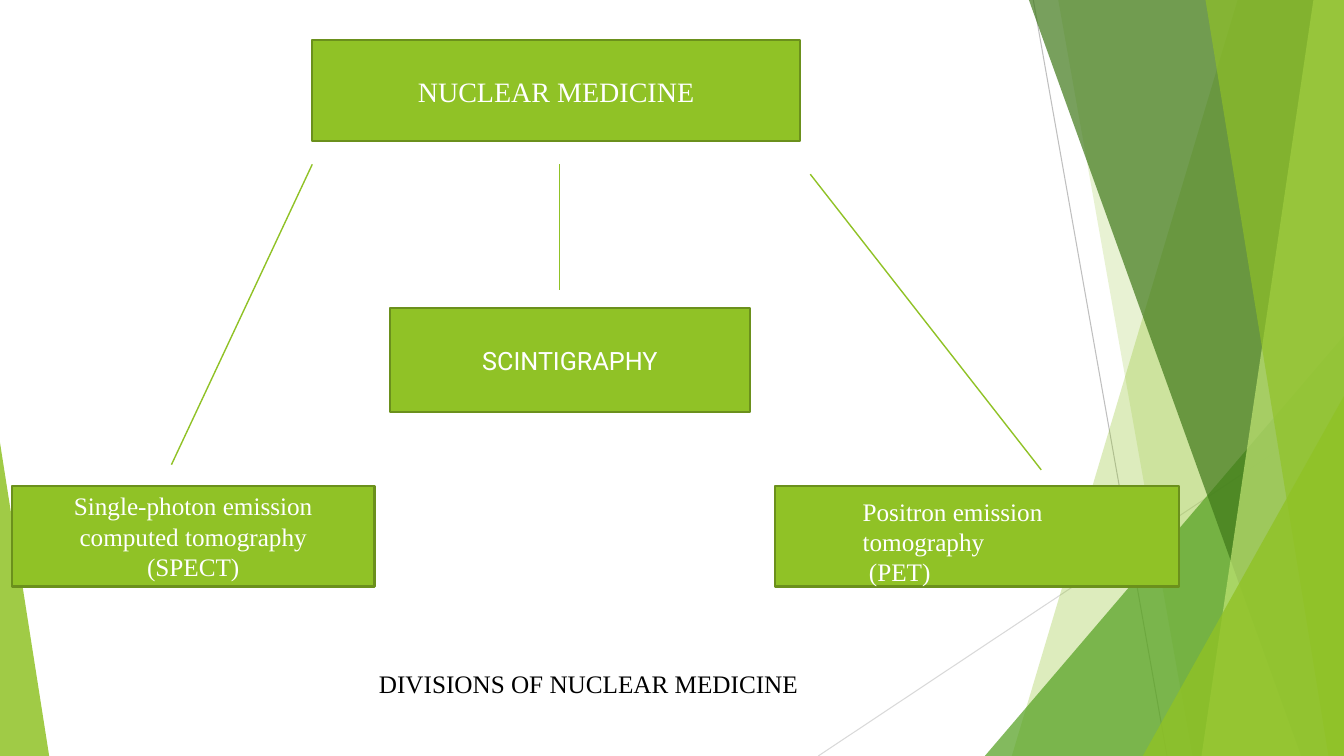
"""Build a slide charting the divisions of nuclear medicine."""
from lxml import etree
from pptx import Presentation
from pptx import util as u
from pptx.dml.color import RGBColor
from pptx.enum import shapes, text
from pptx.oxml.ns import qn

GREEN, EDGE, WHITE, BLACK = "90C226", "6B901C", "FFFFFF", "000000"
SERIF = "Times New Roman"
WIDTH, HEIGHT = u.Cm(33.87), u.Cm(19.05)
CENTER, LEFT = text.PP_ALIGN.CENTER, text.PP_ALIGN.LEFT


def paint(color_format, value):
    color_format.rgb = RGBColor.from_string(value)


def write(shape, lines, size, font, color, align):
    for index, line in enumerate(lines):
        frame = shape.text_frame
        para = frame.paragraphs[0] if index == 0 else frame.add_paragraph()
        para.alignment = align
        span = para.add_run()
        span.text = line
        for name, value in {"size": u.Pt(size), "name": font}.items():
            setattr(span.font, name, value)
        paint(span.font.color, color)


deck = Presentation()
deck.slide_width, deck.slide_height = WIDTH, HEIGHT
page = deck.slides.add_slide(deck.slide_layouts[6])

background_lines = [
    (26.04, 0, 29.41, 19.05, "BFBFBF", 0.75),
    (33.87, 10.24, 20.62, 19.05, "D9D9D9", 0.75),
]
branches = [
    (14.1, 4.14, 14.1, 7.32, GREEN, 1),
    (7.87, 4.14, 4.32, 11.71, GREEN, 1),
    (20.42, 4.39, 26.24, 11.84, GREEN, 1),
]
for *ends, color, weight in background_lines + branches:
    line = page.shapes.add_connector(
        shapes.MSO_CONNECTOR.STRAIGHT, *[u.Cm(value) for value in ends])
    paint(line.line.color, color)
    line.line.width = u.Pt(weight)
    etree.SubElement(line._element.spPr, qn("a:effectLst"))

# Each facet: top x, bottom x, top y, colour, opacity in percent
facets = [
    (31.19, 25.5, 0, GREEN, 30),
    (26.67, 30.05, 0, GREEN, 20),
    (33.87, 24.82, 8.46, "54A021", 72),
    (25.93, 32.79, 0, "3F7819", 70),
    (33.1, 30.28, 0, "C0E474", 70),
    (30.38, 33.48, 0, GREEN, 65),
    (33.87, 28.8, 9.98, GREEN, 80),
    (0, 1.24, 11.15, GREEN, 85),
]
for top_x, bottom_x, top_y, color, opacity in facets:
    if top_y:
        left, right = sorted((top_x, bottom_x))
        facet = page.shapes.add_shape(
            shapes.MSO_SHAPE.ISOSCELES_TRIANGLE, u.Cm(left), u.Cm(top_y),
            u.Cm(right - left), HEIGHT - u.Cm(top_y))
        facet.adjustments[0] = 1 if top_x > bottom_x else 0
    else:
        outline = page.shapes.build_freeform(u.Cm(top_x), 0)
        outline.add_line_segments(
            [(WIDTH, 0), (WIDTH, HEIGHT), (u.Cm(bottom_x), HEIGHT)])
        facet = outline.convert_to_shape()
    facet.shadow.inherit = False
    facet.line.fill.background()
    facet.fill.solid()
    paint(facet.fill.fore_color, color)
    tint = facet._element.spPr.find(qn("a:solidFill"))[0]
    etree.SubElement(tint, qn("a:alpha"), val=str(opacity * 1000))

boxes = [
    (7.87, 1.02, 12.29, 2.54, ["NUCLEAR MEDICINE"], 20, SERIF),
    (0.3, 12.24, 9.14, 2.54,
     ["Single-photon emission computed tomography", "(SPECT)"], 18, SERIF),
    (9.83, 7.77, 9.07, 2.62, ["SCINTIGRAPHY"], 18, "Roboto"),
    (19.53, 12.24, 10.19, 2.54, [], 18, SERIF),
]
for *place, lines, size, font in boxes:
    box = page.shapes.add_shape(
        shapes.MSO_SHAPE.RECTANGLE, *[u.Cm(value) for value in place])
    box.shadow.inherit = False
    box.fill.solid()
    paint(box.fill.fore_color, GREEN)
    paint(box.line.color, EDGE)
    box.line.width = u.Pt(1.5)
    box.text_frame.vertical_anchor = text.MSO_ANCHOR.MIDDLE
    write(box, lines, size, font, WHITE, CENTER)

labels = [
    (21.49, 12.37, 7.16, 2.57,
     ["Positron emission tomography", " (PET) "], WHITE, True),
    (9.3, 16.71, 11.18, 1.02, ["DIVISIONS OF NUCLEAR MEDICINE"], BLACK, False),
]
for *place, lines, color, wrap in labels:
    label = page.shapes.add_textbox(*[u.Cm(value) for value in place])
    label.text_frame.word_wrap = wrap
    label.text_frame.auto_size = text.MSO_AUTO_SIZE.SHAPE_TO_FIT_TEXT
    write(label, lines, 18, SERIF, color, LEFT)

deck.save("out.pptx")
